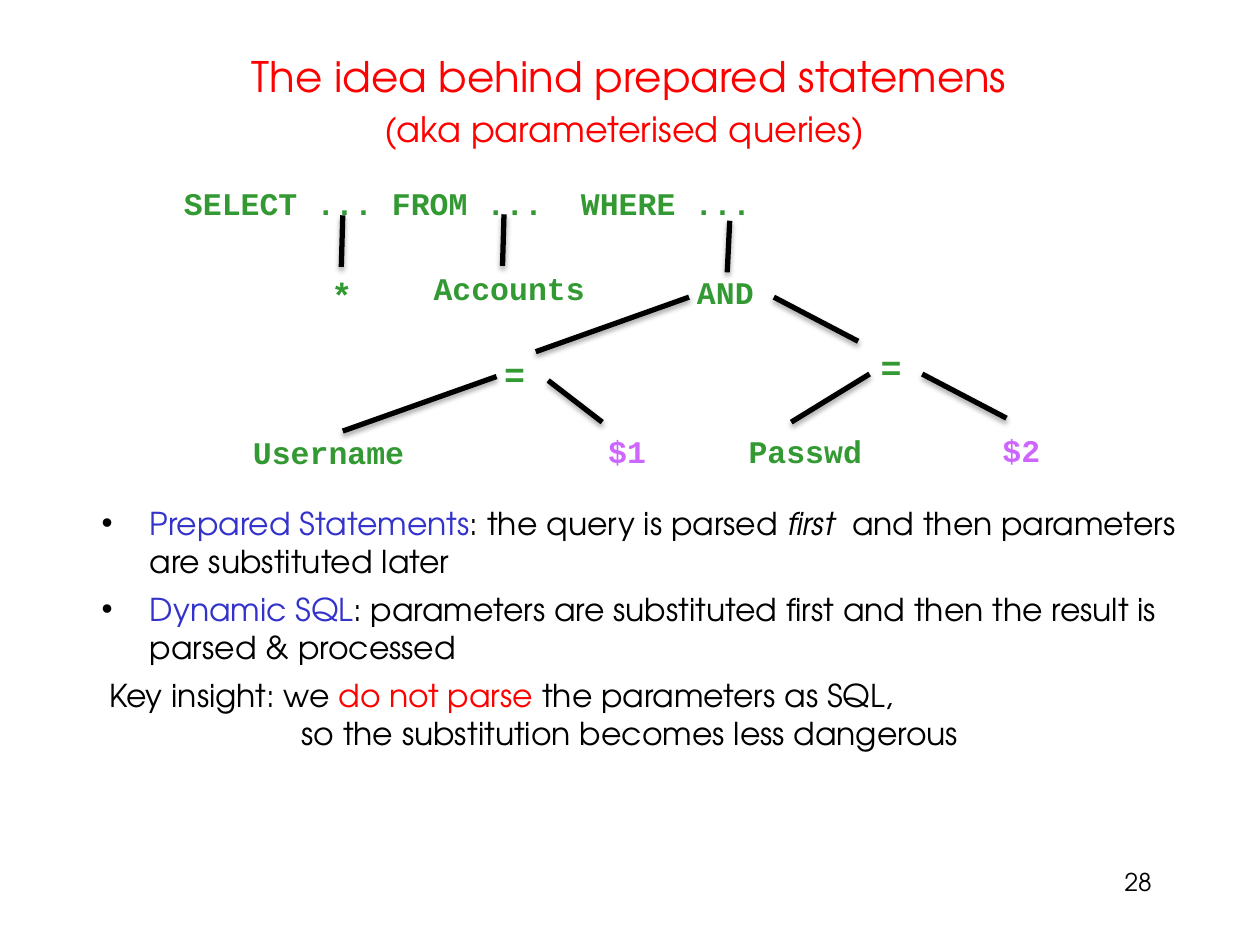
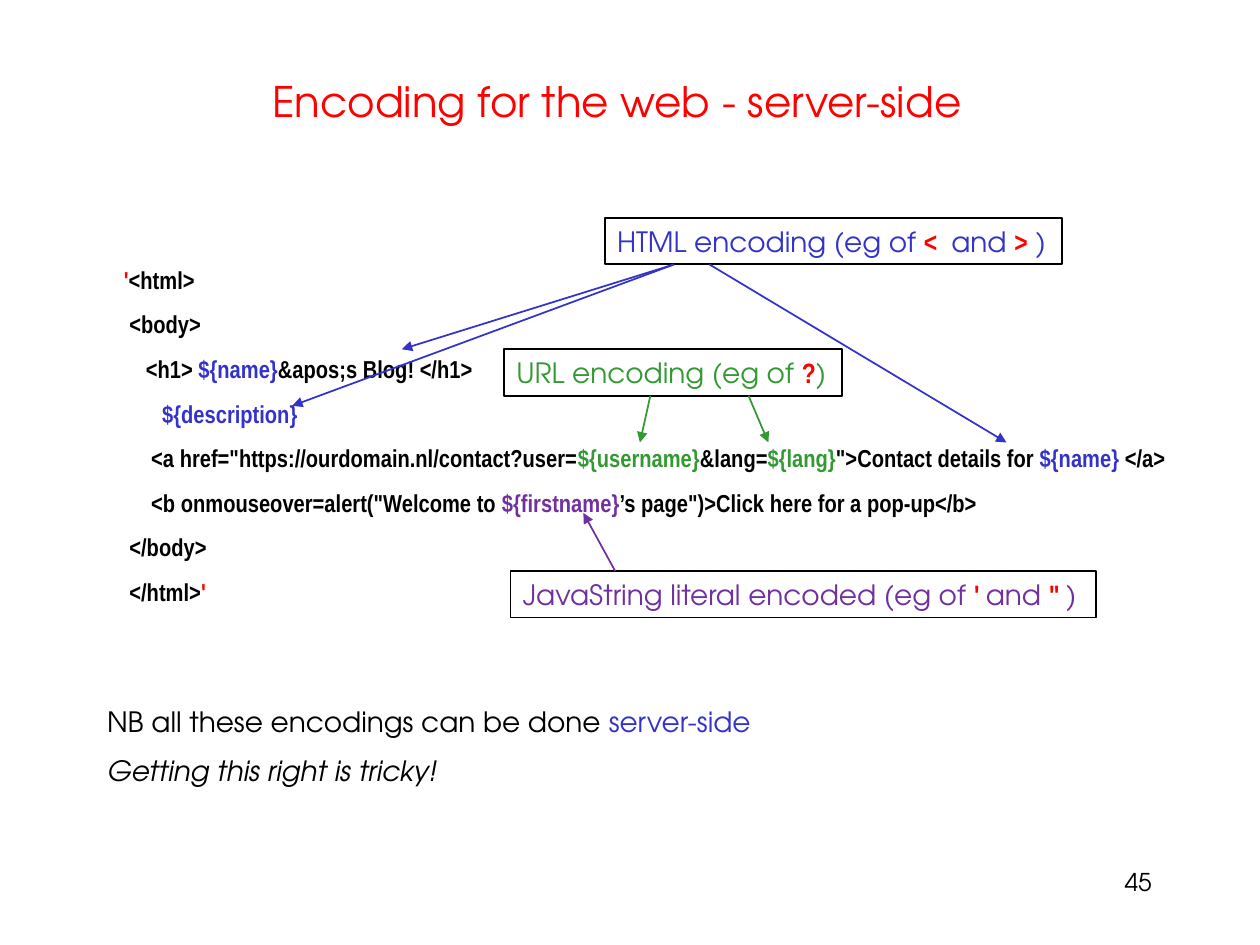
import lxml.etree
import pptx
import pptx.dml.color
import pptx.enum.shapes
import pptx.enum.text
import pptx.oxml.ns
import pptx.util

Cm, Pt = pptx.util.Cm, pptx.util.Pt
RGB = pptx.dml.color.RGBColor
ALIGN = pptx.enum.text.PP_ALIGN
ANCHOR = pptx.enum.text.MSO_ANCHOR
qn = pptx.oxml.ns.qn

BLACK = RGB(0x00, 0x00, 0x00)
WHITE = RGB(0xFF, 0xFF, 0xFF)
RED = RGB(0xFF, 0x00, 0x00)
BLUE = RGB(0x33, 0x33, 0xCC)
GREEN = RGB(0x33, 0x99, 0x33)
PINK = RGB(0xCC, 0x66, 0xFF)
PURPLE = RGB(0x70, 0x30, 0xA0)

SANS, NARROW, MONO = "TeX Gyre Adventor", "Arial Narrow", "Courier New"

HEAD = {"name": SANS, "size": Pt(24)}
SUBHEAD = {"name": SANS, "size": Pt(20)}
FOOT = {"name": SANS, "size": Pt(14)}
BODY = {"name": SANS, "size": Pt(18)}
NOTE = {"name": SANS, "size": Pt(16)}
CODE = {"name": NARROW, "size": Pt(14), "bold": True}
MARK = {"name": NARROW, "size": Pt(16), "bold": True}
ITALIC = {"italic": True}

# Areas in cm: left, top, width, height
TITLE_AREA = (1.9, 0.77, 21.56, 2.34)
PAGE_AREA = (18.21, 17.35, 5.26, 1.24)
BODY_AREA = (1.8, 10.03, 22.71, 6)
CODE_AREA = (1.92, 5.12, 22.3, 7.5)
NOTE_AREA = (1.91, 13.97, 22, 2.6)
PAD = 0.25
SPACE = 0.11      # width of one code column, cm
BOX_HIGH = 0.94

# Runs are (text, colour, extra format)
TREE_TITLE = [
    (HEAD, "The idea behind prepared statemens"),
    (SUBHEAD, "(aka parameterised queries) "),
]
NODES = [  # text, left, top, points, colour
    ("SELECT ... FROM ...  WHERE ...", 3.46, 3.58, 18, GREEN),
    ("Accounts", 8.49, 5.29, 18, GREEN),
    ("AND", 13.8, 5.38, 18, GREEN),
    ("*", 6.43, 5.38, 20, GREEN),
    ("=", 9.91, 6.99, 20, GREEN),
    ("=", 17.5, 6.84, 20, GREEN),
    ("Username", 4.85, 8.61, 18, GREEN),
    ("Passwd", 14.84, 8.59, 18, GREEN),
    ("$1", 12.01, 8.59, 18, PINK),
    ("$2", 19.96, 8.56, 18, PINK),
]
EDGES = [
    (6.91, 4.34, 6.88, 5.38),
    (10.16, 4.32, 10.13, 5.36),
    (14.71, 4.45, 14.66, 5.49),
    (10.8, 7.09, 13.89, 5.99),
    (15.6, 5.99, 17.3, 6.88),
    (6.91, 8.69, 10.01, 7.59),
    (11.05, 7.67, 12.14, 8.51),
    (15.95, 8.51, 17.53, 7.54),
    (18.59, 7.54, 20.29, 8.43),
]
POINTS = [  # bullet, indent, points before, runs
    (True, 0.97, 6, [
        ("Prepared Statements", BLUE, {}),
        (": the query is parsed ", BLACK, {}),
        ("first ", BLACK, ITALIC),
        (" and then parameters are substituted later", BLACK, {})]),
    (True, 0.97, 6, [
        ("Dynamic SQL", BLUE, {}),
        (": parameters are substituted first and then the result is "
         "parsed & processed", BLACK, {})]),
    (False, 0.15, 6, [
        ("Key insight: we", BLACK, {}),
        (" do not parse ", RED, {}),
        ("the parameters as SQL,", BLACK, {})]),
    (False, 4.03, 0, [
        ("so the substitution becomes less dangerous", BLACK, {})]),
]

WEB_TITLE = [(HEAD, "Encoding for the web - server-side")]
LINES = [  # column, runs
    (3, [("'", RED, {}), ("<html>", BLACK, {})]),
    (4, [("<body>", BLACK, {})]),
    (7, [("<h1> ", BLACK, {}), ("${name}", BLUE, {}),
         ("&apos;s Blog! </h1>", BLACK, {})]),
    (10, [("${description}", BLUE, {})]),
    (8, [('<a href="https://ourdomain.nl/contact?user=', BLACK, {}),
         ("${username}", GREEN, {}), ("&lang=", BLACK, {}),
         ("${lang}", GREEN, {}), ('">Contact details for ', BLACK, {}),
         ("${name} ", BLUE, {}), ("</a>", BLACK, {})]),
    (8, [('<b onmouseover=alert("Welcome to ', BLACK, {}),
         ("${firstname}", PURPLE, {}),
         ('’s page")>Click here for a pop-up</b>', BLACK, {})]),
    (4, [("</body>", BLACK, {})]),
    (4, [("</html>", BLACK, {}), ("'", RED, {})]),
]
NOTES = [
    [("NB all these encodings can be done ", BLACK, {}),
     ("server-side", BLUE, {})],
    [("Getting this right is tricky!", BLACK, ITALIC)],
]
LABELS = [  # left, top, width, colour, runs, arrows
    (12.19, 4.39, 9.22, BLUE,
     [("HTML encoding (eg of ", BLUE, {}), ("< ", RED, MARK),
      (" and ", BLUE, {}), (">", RED, MARK), (" )", BLUE, {})],
     [(13.59, 5.33, 8.1, 7.04), (13.59, 5.33, 5.89, 8.18),
      (14.3, 5.33, 20.29, 8.92)]),
    (10.16, 7.04, 6.81, GREEN,
     [("URL encoding (eg of ", GREEN, {}), ("?", RED, MARK),
      (")", GREEN, {})],
     [(13.11, 7.98, 12.9, 8.92), (15.09, 7.98, 15.49, 8.92)]),
    (10.29, 11.51, 11.81, PURPLE,
     [("JavaString literal encoded (eg of ", PURPLE, {}), ("' ", RED, MARK),
      ("and ", PURPLE, {}), ('" ', RED, MARK), (")", PURPLE, {})],
     [(12.4, 11.51, 11.76, 10.34)]),
]


def assign(item, values):
    for key, value in values.items():
        setattr(item, key, value)


def add_node(parent, tag, **values):
    return lxml.etree.SubElement(parent, qn(tag), values)


def fill_para(para, runs, base, **layout):
    """Write (text, colour, extra) runs on top of a base font."""
    assign(para, layout)
    for text, tint, extra in runs:
        run = para.add_run()
        run.text = text
        assign(run.font, {**base, **extra})
        run.font.color.rgb = tint


def each_para(frame, items):
    """Pair every item with its own paragraph of the frame."""
    for place, item in enumerate(items):
        yield (frame.add_paragraph() if place else frame.paragraphs[0]), item


def indent(para, left, bullet=False):
    props = para._p.get_or_add_pPr()
    props.set("marL", str(Cm(left)))
    props.set("indent", str(-Cm(left) if bullet else 0))
    if bullet:
        tint = add_node(props, "a:buClr")
        add_node(tint, "a:srgbClr", val=str(BLACK))
        add_node(props, "a:buFont", typeface="Arial")
        add_node(props, "a:buChar", char="•")


def add_text(slide, area, **layout):
    frame = slide.shapes.add_textbox(*map(Cm, area)).text_frame
    assign(frame, {"word_wrap": True, **layout})
    return frame


def add_line(slide, ends, tint, width):
    line = slide.shapes.add_connector(
        pptx.enum.shapes.MSO_CONNECTOR.STRAIGHT, *map(Cm, ends))
    line.line.color.rgb = tint
    line.line.width = Pt(width)
    return line, add_node(line._element.spPr, "a:effectLst")


def add_edge(slide, ends):
    """Thick tree branch with a soft shadow below."""
    effects = add_line(slide, ends, BLACK, 3)[1]
    shade = add_node(effects, "a:outerShdw", blurRad=str(Pt(3.1)),
                     dist=str(Pt(1.8)), dir="5400000", rotWithShape="0")
    tint = add_node(shade, "a:srgbClr", val=str(BLACK))
    add_node(tint, "a:alpha", val="35000")


def add_arrow(slide, ends, tint):
    line = add_line(slide, ends, tint, 1)[0]
    add_node(line.line._get_or_add_ln(), "a:tailEnd", type="triangle")


def add_label(slide, left, top, width, tint, runs, arrows):
    box = slide.shapes.add_shape(
        pptx.enum.shapes.MSO_SHAPE.RECTANGLE,
        *map(Cm, (left, top, width, BOX_HIGH)))
    box.shadow.inherit = False
    box.fill.background()
    box.line.color.rgb = BLACK
    box.line.width = Pt(1)
    assign(box.text_frame, {"word_wrap": True, "margin_right": 0})
    fill_para(box.text_frame.paragraphs[0], runs, NOTE, alignment=ALIGN.LEFT)
    for ends in arrows:
        add_arrow(slide, ends, tint)


def add_page(deck, title, number, inset=PAD):
    """New slide with the shared title and page number."""
    slide = deck.slides.add_slide(deck.slide_layouts[6])
    slide.background.fill.solid()
    slide.background.fill.fore_color.rgb = WHITE
    frame = add_text(slide, TITLE_AREA, vertical_anchor=ANCHOR.MIDDLE,
                     margin_right=Cm(inset))
    for para, (base, text) in each_para(frame, title):
        fill_para(para, [(text, RED, {})], base,
                  alignment=ALIGN.CENTER, line_spacing=1.16)
    foot = add_text(slide, PAGE_AREA)
    fill_para(foot.paragraphs[0], [(number, BLACK, {})], FOOT,
              alignment=ALIGN.RIGHT)
    return slide


def build_tree(deck):
    slide = add_page(deck, TREE_TITLE, "28")
    frame = add_text(slide, BODY_AREA)
    for para, (bullet, left, before, runs) in each_para(frame, POINTS):
        fill_para(para, runs, BODY, space_before=Pt(before))
        indent(para, left, bullet)
    for text, left, top, size, tint in NODES:
        glyph = Pt(size).cm * 0.6
        area = (left, top, len(text) * glyph + 2 * PAD, 0.91)
        node = add_text(slide, area, margin_right=0)
        fill_para(node.paragraphs[0], [(text, tint, {})],
                  {"name": MONO, "size": Pt(size), "bold": True})
    for ends in EDGES:
        add_edge(slide, ends)


def build_web(deck):
    slide = add_page(deck, WEB_TITLE, "45", inset=0.74)
    spacing = {"line_spacing": 1.16, "space_before": Pt(6)}
    for para, (column, runs) in each_para(add_text(slide, CODE_AREA), LINES):
        fill_para(para, runs, CODE, **spacing)
        indent(para, column * SPACE)
    for para, runs in each_para(add_text(slide, NOTE_AREA), NOTES):
        fill_para(para, runs, NOTE, **spacing)
    for label in LABELS:
        add_label(slide, *label)


def main():
    deck = pptx.Presentation()
    assign(deck, {"slide_width": Cm(25.4), "slide_height": Cm(19.05)})
    build_tree(deck)
    build_web(deck)
    deck.save("out.pptx")


if __name__ == "__main__":
    main()
